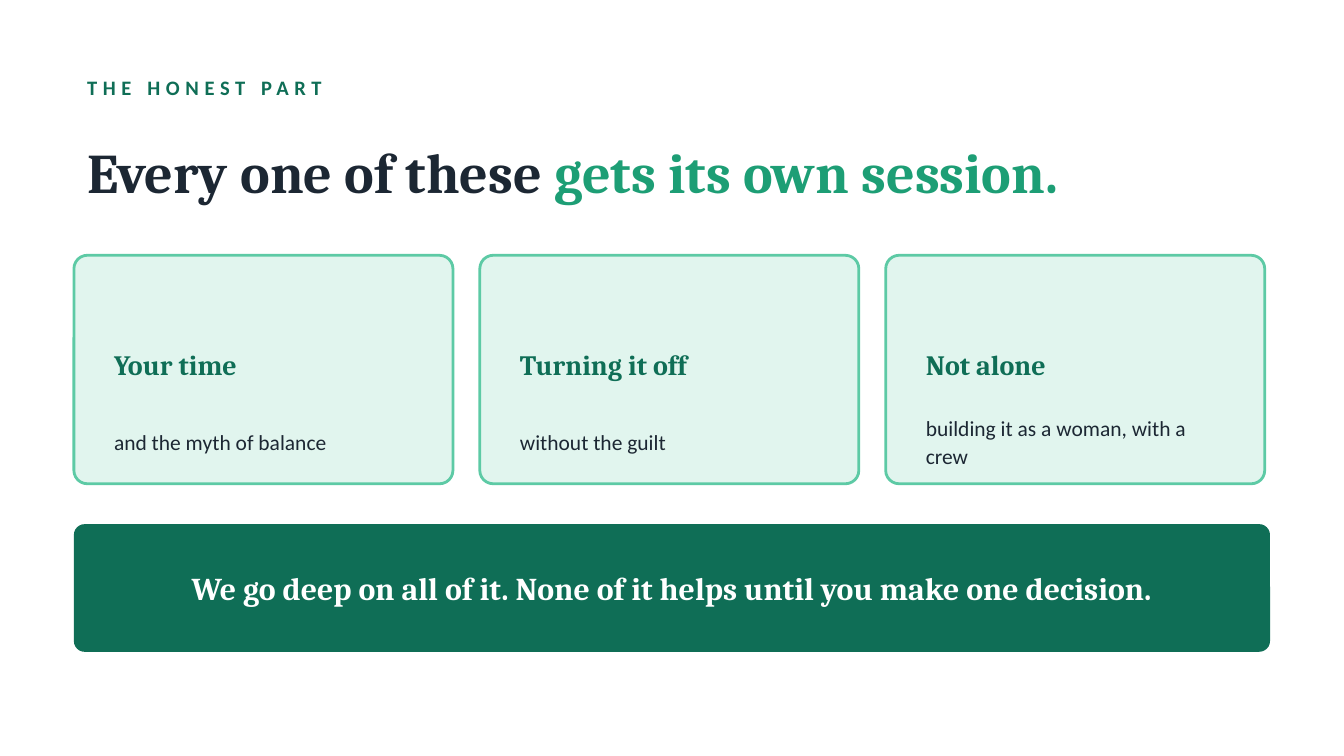
import pptx
import pptx.dml.color
import pptx.enum.shapes
import pptx.enum.text
import pptx.util

PX = 9144  # one px is a hundredth of an inch
COLORS = {
    "deep": "0F6E56",
    "accent": "1D9E75",
    "border": "5DCAA5",
    "mint": "E1F5EE",
    "ink": "1C2733",
    "white": "FFFFFF",
}

# Content
KICKER = "THE HONEST PART"
TITLE = [("Every one of these ", "ink"), ("gets its own session.", "accent")]
CARDS = [
    ("Your time", "and the myth of balance"),
    ("Turning it off", "without the guilt"),
    ("Not alone", "building it as a woman, with a crew"),
]
BANNER = "We go deep on all of it. None of it helps until you make one decision."

# Layout in px
SLIDE_WIDTH = 1000
LEFT, WIDTH = 55, 890
CARD_TOP, CARD_WIDTH, CARD_HEIGHT, CARD_GAP = 190, 282, 170, 20
BANNER_TOP, BANNER_HEIGHT = 390, 95
CARD_CORNER, BANNER_CORNER = 10, 8


def px(*lengths):
    return [pptx.util.Emu(length * PX) for length in lengths]


def rgb(name):
    return pptx.dml.color.RGBColor.from_string(COLORS[name])


def add_text(slide, box, runs, size, font, bold=True, tracking=0,
             line_spacing=None, centered=False):
    frame = slide.shapes.add_textbox(*px(*box)).text_frame
    frame.word_wrap = True
    frame.vertical_anchor = pptx.enum.text.MSO_ANCHOR.MIDDLE
    paragraph = frame.paragraphs[0]
    if centered:
        paragraph.alignment = pptx.enum.text.PP_ALIGN.CENTER
    if line_spacing:
        paragraph.line_spacing = line_spacing
    for text, color in runs:
        run = paragraph.add_run()
        run.text = text
        run.font.size = pptx.util.Pt(size)
        run.font.name = font
        run.font.bold = bold
        run.font.color.rgb = rgb(color)
        if tracking:
            run.font._element.set("spc", str(tracking * 100))


def add_panel(slide, box, corner, fill, border=None):
    shape = slide.shapes.add_shape(
        pptx.enum.shapes.MSO_SHAPE.ROUNDED_RECTANGLE, *px(*box))
    shape.shadow.inherit = False
    shape.adjustments[0] = corner / box[3]
    shape.fill.solid()
    shape.fill.fore_color.rgb = rgb(fill)
    if border:
        shape.line.color.rgb = rgb(border)
        shape.line.width = pptx.util.Pt(1.5)
    else:
        shape.line.fill.background()


def main():
    # Widescreen 16:9 slide
    presentation = pptx.Presentation()
    presentation.slide_width = pptx.util.Emu(SLIDE_WIDTH * PX)
    presentation.slide_height = pptx.util.Emu(SLIDE_WIDTH * PX * 9 // 16)
    slide = presentation.slides.add_slide(presentation.slide_layouts[6])
    slide.background.fill.solid()
    slide.background.fill.fore_color.rgb = rgb("white")

    # Heading
    add_text(slide, (LEFT, 50, WIDTH, 30), [(KICKER, "deep")], 11, "Calibri",
             tracking=3)
    add_text(slide, (LEFT, 85, WIDTH, 85), TITLE, 30, "Cambria")

    # Cards
    for index, (heading, detail) in enumerate(CARDS):
        left = LEFT + index * (CARD_WIDTH + CARD_GAP)
        add_panel(slide, (left, CARD_TOP, CARD_WIDTH, CARD_HEIGHT),
                  CARD_CORNER, "mint", "border")
        add_text(slide, (left + 20, CARD_TOP + 46, 245, 70),
                 [(heading, "deep")], 15, "Cambria")
        add_text(slide, (left + 20, CARD_TOP + 118, 245, 40),
                 [(detail, "ink")], 11.5, "Calibri", bold=False,
                 line_spacing=1.08)

    # Closing banner
    add_panel(slide, (LEFT, BANNER_TOP, WIDTH, BANNER_HEIGHT), BANNER_CORNER,
              "deep")
    add_text(slide, (LEFT + 25, BANNER_TOP, WIDTH - 50, BANNER_HEIGHT),
             [(BANNER, "white")], 17, "Cambria", centered=True)

    presentation.save("out.pptx")


if __name__ == "__main__":
    main()
